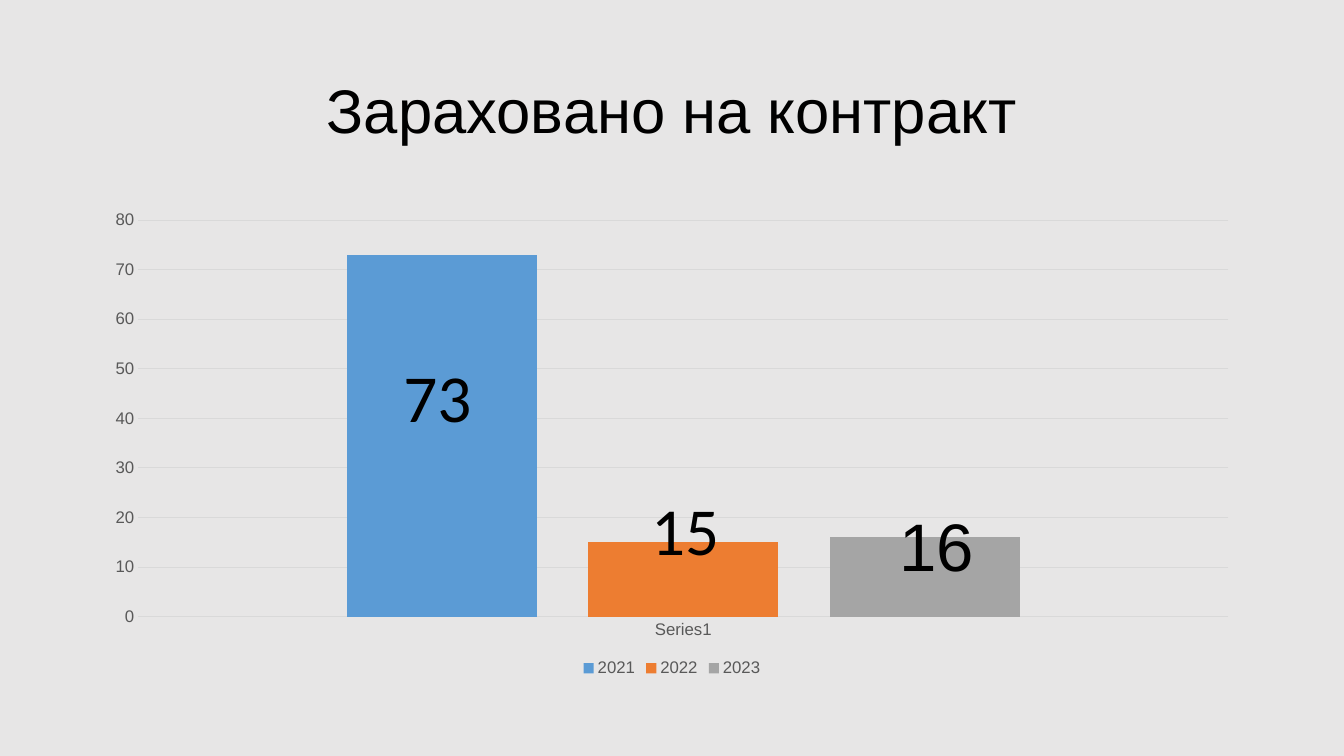
import pptx
import pptx.chart.data
import pptx.dml.color
import pptx.enum.chart
import pptx.enum.text
import pptx.oxml
import pptx.oxml.ns
import pptx.util
from pptx.util import Pt

COLOURS = {
    "background": "E7E6E6", "text": "000000", "axis": "595959", "grid": "D9D9D9",
    "2021": "5B9BD5", "2022": "ED7D31", "2023": "A5A5A5",
}
ENROLLED = {"2021": 73, "2022": 15, "2023": 16}


def colour(name):
    return pptx.dml.color.RGBColor.from_string(COLOURS[name])


def set_font(font, size, name="Arial", colour_name="text"):
    for attribute, value in {"size": Pt(size), "name": name, "bold": False}.items():
        setattr(font, attribute, value)
    font.color.rgb = colour(colour_name)


def set_line(line):
    line.color.rgb = colour("grid")
    line.width = Pt(0.75)


def add_text(slide, box, text, font_name, frame_format, paragraph_format):
    shape = slide.shapes.add_textbox(*map(Pt, box))
    for attribute, value in frame_format.items():
        setattr(shape.text_frame, attribute, value)
    paragraph = shape.text_frame.paragraphs[0]
    for attribute, value in paragraph_format.items():
        setattr(paragraph, attribute, value)
    run = paragraph.add_run()
    run.text = text
    return run.font


def add_title(slide, box):
    font = add_text(
        slide, box, "Зараховано на контракт", "Arial",
        {"word_wrap": True, "vertical_anchor": pptx.enum.text.MSO_ANCHOR.MIDDLE},
        {"alignment": pptx.enum.text.PP_ALIGN.CENTER, "line_spacing": 0.9})
    set_font(font, 44)


def add_bar_value(slide, box, year):
    font = add_text(
        slide, box, str(ENROLLED[year]), "Calibri",
        {"word_wrap": True, "auto_size": pptx.enum.text.MSO_AUTO_SIZE.SHAPE_TO_FIT_TEXT}, {})
    set_font(font, 48, "Calibri")


def add_shifted_label(point, right, down):
    """Label a bar, moved from its outside end by fractions of the chart size."""
    label = point.data_label
    set_font(label.font, 48)
    label.position = pptx.enum.chart.XL_LABEL_POSITION.OUTSIDE_END
    layout = pptx.oxml.parse_xml(
        f'<c:layout {pptx.oxml.ns.nsdecls("c")}><c:manualLayout>'
        f'<c:x val="{right}"/><c:y val="{down}"/></c:manualLayout></c:layout>')
    label_element = point.data_label._dLbl
    label_element.insert(1, layout)


def add_enrolment_chart(slide, box):
    data = pptx.chart.data.CategoryChartData()
    data.categories = ["Series1"]
    for year, count in ENROLLED.items():
        data.add_series(year, [count])
    chart_type = pptx.enum.chart.XL_CHART_TYPE.COLUMN_CLUSTERED
    chart = slide.shapes.add_chart(chart_type, *map(Pt, box), data).chart
    chart.has_title = False
    set_font(chart.font, 10)

    chart.has_legend = True
    chart.legend.position = pptx.enum.chart.XL_LEGEND_POSITION.BOTTOM
    chart.legend.include_in_layout = False
    set_font(chart.legend.font, 12, colour_name="axis")

    for axis in (chart.category_axis, chart.value_axis):
        axis.major_tick_mark = axis.minor_tick_mark = pptx.enum.chart.XL_TICK_MARK.NONE
        set_font(axis.tick_labels.font, 12, colour_name="axis")
    set_line(chart.category_axis.format.line)
    chart.value_axis.format.line.fill.background()
    set_line(chart.value_axis.major_gridlines.format.line)

    plot = chart.plots[0]
    for attribute, value in {"gap_width": 219, "overlap": -27, "vary_by_categories": False}.items():
        setattr(plot, attribute, value)
    for series in plot.series:
        series.format.fill.solid()
        series.format.fill.fore_color.rgb = colour(series.name)
    add_shifted_label(plot.series[2].points[0], 0.01, 0.11)


def build_enrolment_slide(presentation):
    slide = presentation.slides.add_slide(presentation.slide_layouts[6])
    slide.background.fill.solid()
    slide.background.fill.fore_color.rgb = colour("background")
    add_title(slide, (66, 29, 828, 104.4))
    add_enrolment_chart(slide, (66, 144, 828, 342.6))
    for year, left, top in (("2021", 281, 250), ("2022", 458, 345.6)):
        add_bar_value(slide, (left, top, 76, 65.4), year)


def main():
    presentation = pptx.Presentation()
    presentation.slide_width, presentation.slide_height = Pt(960), Pt(540)
    build_enrolment_slide(presentation)
    presentation.save("out.pptx")


if __name__ == "__main__":
    main()
